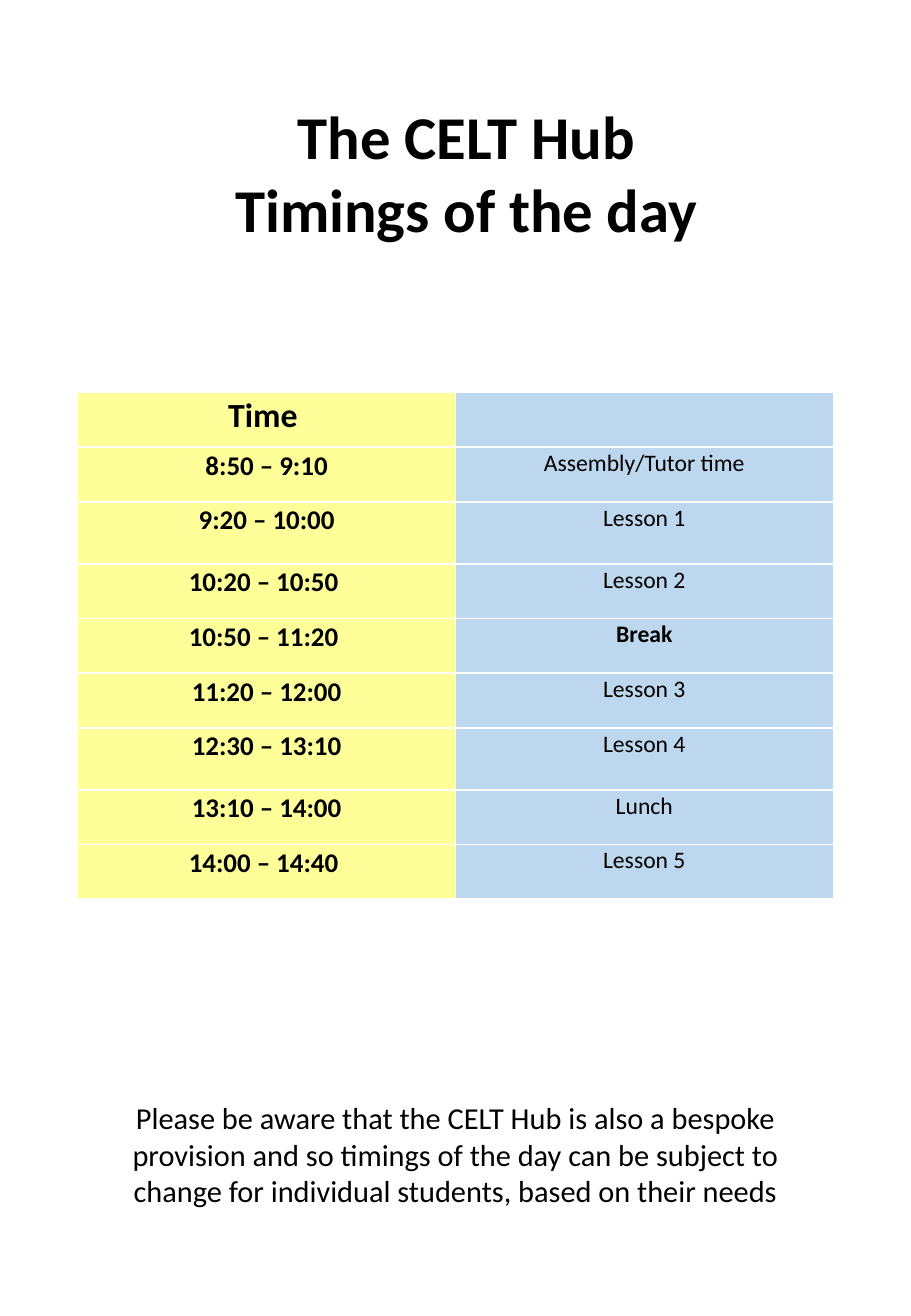
"""Build the one-page timetable of the CELT Hub day."""
import pptx
import pptx.dml.color
import pptx.enum.text
import pptx.util
from pptx.util import Inches

BLACK = pptx.dml.color.RGBColor(0x00, 0x00, 0x00)
YELLOW = pptx.dml.color.RGBColor(0xFF, 0xFF, 0x99)
BLUE = pptx.dml.color.RGBColor(0xBD, 0xD7, 0xEE)

TITLE = ["The CELT Hub", "Timings of the day"]
TIMETABLE = [
    ("Time ", ""),
    ("8:50 – 9:10", "Assembly/Tutor time"),
    ("9:20 – 10:00", "Lesson 1"),
    ("10:20 – 10:50 ", "Lesson 2"),
    ("10:50 – 11:20 ", "Break"),
    ("11:20 – 12:00", "Lesson 3"),
    ("12:30 – 13:10", "Lesson 4"),
    ("13:10 – 14:00", "Lunch"),
    ("14:00 – 14:40 ", "Lesson 5"),
]
TALL_ROWS = (2, 6)
NOTE = ("Please be aware that the CELT Hub is also a bespoke provision and so timings "
        "of the day can be subject to change for individual students, based on their needs")


def set_attrs(obj, values):
    for name, value in values.items():
        setattr(obj, name, value)


def write(tf, lines, size, bold=False, spacing=1.0):
    tf.text = "\n".join(lines)
    for p in tf.paragraphs:
        set_attrs(p, {"alignment": pptx.enum.text.PP_ALIGN.CENTER, "line_spacing": spacing})
        for r in p.runs:
            set_attrs(r.font, {"name": "Calibri", "size": pptx.util.Pt(size), "bold": bold})
            r.font.color.rgb = BLACK


def add_title(s):
    sp = s.shapes.title
    set_attrs(sp, {"left": Inches(1.32), "top": Inches(0.76),
                   "width": Inches(5.04), "height": Inches(1.31)})
    set_attrs(sp.text_frame, {"word_wrap": True,
                              "vertical_anchor": pptx.enum.text.MSO_ANCHOR.TOP,
                              "auto_size": pptx.enum.text.MSO_AUTO_SIZE.NONE})
    write(sp.text_frame, TITLE, 36, bold=True)


def fill_cell(cell, text, color, size, bold):
    set_attrs(cell, {"margin_left": Inches(0.07), "margin_right": Inches(0.07),
                     "margin_top": 0, "margin_bottom": 0})
    cell.fill.solid()
    cell.fill.fore_color.rgb = color
    write(cell.text_frame, [text], size, bold, spacing=1.07)


def add_timetable(s):
    table = s.shapes.add_table(len(TIMETABLE), 2, Inches(0.64), Inches(3.23),
                               Inches(6.22), Inches(4.19)).table
    for i, (time, activity) in enumerate(TIMETABLE):
        table.rows[i].height = Inches(0.51 if i in TALL_ROWS else 0.45)
        fill_cell(table.cell(i, 0), time, YELLOW, 16 if i else 20, True)
        fill_cell(table.cell(i, 1), activity, BLUE, 14, activity == "Break")


def add_note(s):
    sp = s.shapes.add_textbox(Inches(0.64), Inches(9), Inches(6.22), Inches(1.01))
    sp.text_frame.word_wrap = True
    write(sp.text_frame, [NOTE], 18)


def main():
    prs = pptx.Presentation()
    set_attrs(prs, {"slide_width": Inches(7.5), "slide_height": Inches(10.83)})
    s = prs.slides.add_slide(prs.slide_layouts.get_by_name("Title Only"))
    add_title(s)
    add_timetable(s)
    add_note(s)
    prs.save("out.pptx")


if __name__ == "__main__":
    main()
